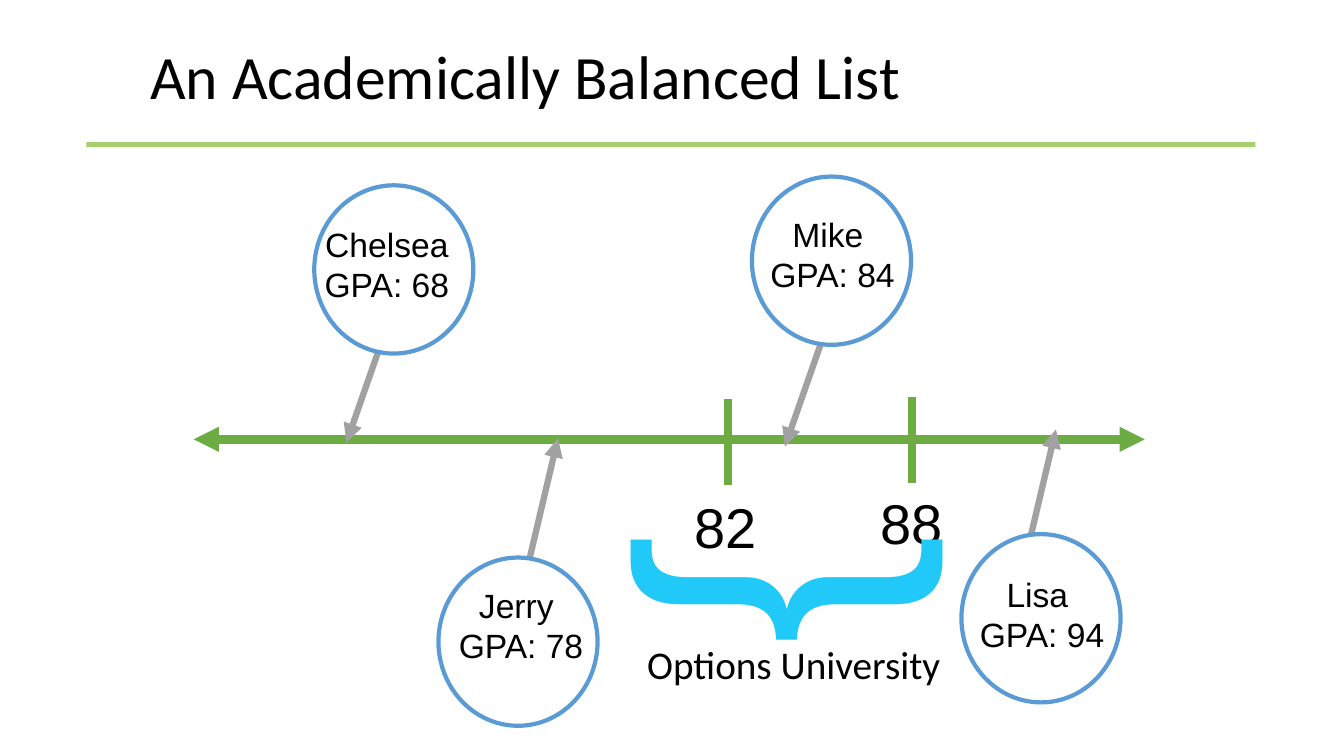
from lxml import etree
from pptx import Presentation
from pptx.dml.color import RGBColor
from pptx.enum.shapes import MSO_CONNECTOR, MSO_SHAPE
from pptx.enum.text import MSO_ANCHOR, MSO_AUTO_SIZE, PP_ALIGN
from pptx.oxml.ns import qn
from pptx.util import Cm, Pt

LEFT, MID = PP_ALIGN.LEFT, PP_ALIGN.CENTER
TOP, MIDDLE = MSO_ANCHOR.TOP, MSO_ANCHOR.MIDDLE
NO_FIT = MSO_AUTO_SIZE.NONE
STRAIGHT = MSO_CONNECTOR.STRAIGHT
RECT, OVAL = MSO_SHAPE.RECTANGLE, MSO_SHAPE.OVAL

# Content: all lengths in centimetres
TITLE = "An Academically Balanced List"
SCHOOL = "Options University"
# name lines, circle corner, arrow start, arrow step, label corner
UP, DOWN = (0.88, -3.73), (-1.2, 3.43)
STUDENTS = [
    (["Lisa ", "GPA: 94"], (24.23, 13.46), (25.73, 14.55), UP, (23.67, 14.33)),
    (["Mike ", "GPA: 84"], (18.95, 4.45), (20.98, 7.82), DOWN, (18.39, 5.26)),
    (["Chelsea", "GPA: 68"], (7.92, 4.67), (9.93, 7.72), DOWN, (7.16, 5.51)),
    (["Jerry ", "GPA: 78"], (11.05, 14.05), (13.18, 14.78), UP, (10.54, 14.61)),
]
# grade, top of tick, label corner
TICKS = [
    ("82", (18.34, 10.06), (17.15, 12.27)),
    ("88", (22.99, 10.01), (21.84, 12.17)),
]
AXIS = (4.88, 28.85, 11.07)
TICK = 2.15
CIRCLE = (4.01, 4.24)
COLORS = {
    "text": "000000", "rule": "A7CE6F", "axis": "6DAC43", "arrow": "A1A1A1",
    "ring": "5B9BD5", "white": "FFFFFF", "brace": "20C9F8",
}

deck = Presentation()
deck.slide_width, deck.slide_height = Cm(33.87), Cm(19.05)
slide = deck.slides.add_slide(deck.slide_layouts[1])
shapes = slide.shapes


def color(name):
    return RGBColor.from_string(COLORS[name])


def write(lines, x, y, w, h, box=None, size=24, font="Arial", tint="text",
          align=MID, anchor=TOP, pad=(0.25, 0.13), space=1.0):
    """Fill a placeholder or a new text box with formatted lines."""
    if box is None:
        box = shapes.add_textbox(Cm(x), Cm(y), Cm(w), Cm(h))
    box.left, box.top, box.width, box.height = Cm(x), Cm(y), Cm(w), Cm(h)
    frame = box.text_frame
    frame.word_wrap, frame.auto_size = True, NO_FIT
    frame.vertical_anchor = anchor
    frame.margin_left = frame.margin_right = Cm(pad[0])
    frame.margin_top = frame.margin_bottom = Cm(pad[1])
    frame.text = "\n".join(lines)
    for para in frame.paragraphs:
        para.alignment, para.line_spacing = align, space
        para.space_before = Pt(0)
        props = para._p.get_or_add_pPr()
        props.set("marL", "0")
        props.set("indent", "0")
        etree.SubElement(props, qn("a:buNone"))
        for run in para.runs:
            run.font.name, run.font.size = font, Pt(size)
            run.font.color.rgb = color(tint)
    return box


def draw(kind, x, y, w, h, fill, ring=None):
    shape = shapes.add_shape(kind, Cm(x), Cm(y), Cm(w), Cm(h))
    shape.shadow.inherit = False
    shape.fill.solid()
    shape.fill.fore_color.rgb = color(fill)
    if ring:
        shape.line.color.rgb, shape.line.width = color(ring), Pt(3)
    else:
        shape.line.fill.background()


def link(x1, y1, x2, y2, tint, width, ends=()):
    line = shapes.add_connector(STRAIGHT, Cm(x1), Cm(y1), Cm(x2), Cm(y2))
    line.line.color.rgb, line.line.width = color(tint), Pt(width)
    for end in ends:
        etree.SubElement(line.line._ln, qn("a:" + end), type="triangle")
    etree.SubElement(line._element.spPr, qn("a:effectLst"))


# Title, rule and school name
title, body = slide.placeholders
write([TITLE], 3.66, 0.64, 30.2, 2.74, box=title, size=44, font="Calibri",
      align=LEFT, anchor=MIDDLE, pad=(0.13, 0.13), space=0.9)
write([SCHOOL], 16.18, 16.15, 8.41, 1.19, box=body, size=28, font="Calibri",
      align=LEFT, pad=(0.13, 0.13), space=0.9)
draw(RECT, 2.18, 3.58, 29.46, 0.13, "rule")

# Grade axis
start, stop, level = AXIS
link(start, level, stop, level, "axis", 6, ("headEnd", "tailEnd"))

# Students: arrow, circle and label
for lines, ring, (x, y), (dx, dy), spot in STUDENTS:
    link(x, y, x + dx, y + dy, "arrow", 4.5, ("tailEnd",))
    draw(OVAL, *ring, *CIRCLE, "white", "ring")
    write(lines, *spot, 5.18, 2.31)

# Ticks that bound the school's range
for grade, (x, y), spot in TICKS:
    link(x, y, x, y + TICK, "axis", 6)
    write([grade], *spot, 2.26, 1.96, size=40)

# Brace under the range
brace = write(["}"], 20.24, 8.74, 1.5, 10.46, size=239, tint="brace", align=LEFT)
brace.rotation = 90

deck.save("out.pptx")
